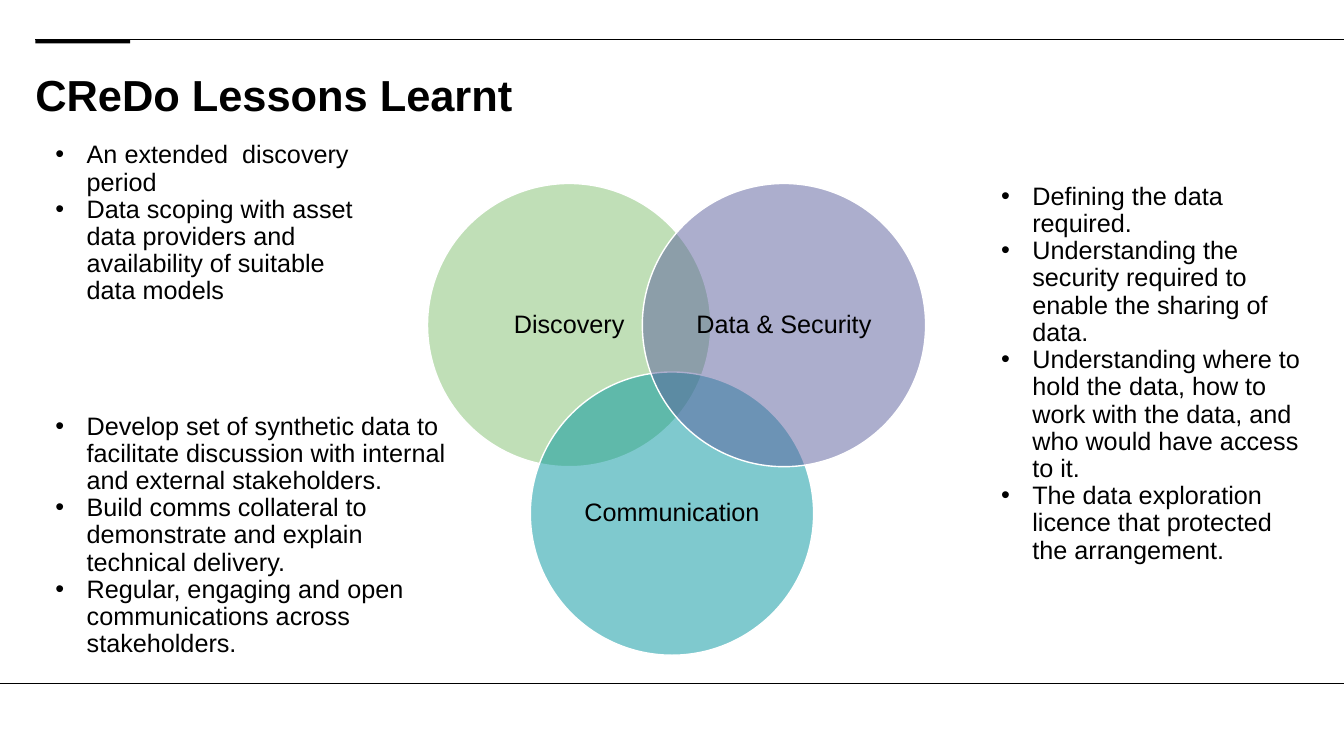
from lxml import etree
from pptx import Presentation
from pptx.dml.color import RGBColor
from pptx.enum.shapes import MSO_CONNECTOR, MSO_SHAPE
from pptx.enum.text import MSO_ANCHOR, PP_ALIGN
from pptx.oxml.ns import qn
from pptx.util import Inches, Pt

STRAIGHT = MSO_CONNECTOR.STRAIGHT
OVAL, RECTANGLE = MSO_SHAPE.OVAL, MSO_SHAPE.RECTANGLE
MIDDLE, CENTER = MSO_ANCHOR.MIDDLE, PP_ALIGN.CENTER

BLACK = RGBColor(0x00, 0x00, 0x00)
WHITE = RGBColor(0xFF, 0xFF, 0xFF)
GREEN = RGBColor(0x83, 0xC0, 0x70)
TEAL = RGBColor(0x00, 0x95, 0x9E)
PURPLE = RGBColor(0x5A, 0x5E, 0x9D)

FONT = "Arial"
BODY_SIZE = 18
TITLE_SIZE = 31
SLIDE_WIDTH, SLIDE_HEIGHT = Inches(13.33), Inches(7.5)

# Percentages of the slide's width or height
MARGIN = 2.63
LEFT_COLUMN = 4.13
RIGHT_COLUMN = 74.49
TOP_RULE, BOTTOM_RULE = 5.2, 90.4
VENN_TOP = 24.27
CIRCLE_WIDTH = 21.08

# Label, colour, left, top, from back to front
THEMES = [
    ("Discovery", GREEN, 31.81, VENN_TOP),
    ("Communication", TEAL, 39.46, 49.2),
    ("Data & Security", PURPLE, 47.79, VENN_TOP),
]

# Left, top, width, height, points
LESSONS = [
    (LEFT_COLUMN, 18.8, 22.73, 21.07, [
        "An extended  discovery period",
        "Data scoping with asset data providers and availability of suitable data models",
    ]),
    (RIGHT_COLUMN, VENN_TOP, 22.73, 52.67, [
        "Defining the data required.",
        "Understanding the security required to enable the sharing of data.",
        "Understanding where to hold the data, how to work with the data, "
        "and who would have access to it.",
        "The data exploration licence that protected the arrangement.",
    ]),
    (LEFT_COLUMN, 54.67, 29.41, 32.8, [
        "Develop set of synthetic data to facilitate discussion with internal "
        "and external stakeholders.",
        "Build comms collateral to demonstrate and explain technical delivery.",
        "Regular, engaging and open communications across stakeholders.",
    ]),
]


def across(percent):
    return round(SLIDE_WIDTH * percent / 100)


def down(percent):
    return round(SLIDE_HEIGHT * percent / 100)


def set_margins(frame, margin):
    frame.margin_left = frame.margin_right = margin
    frame.margin_top = frame.margin_bottom = margin


def style(paragraph, size, bold=False):
    paragraph.line_spacing = 0.9
    font = paragraph.font
    font.name, font.size, font.bold = FONT, Pt(size), bold
    font.color.rgb = BLACK


def add_bullet(paragraph):
    properties = paragraph._p.get_or_add_pPr()
    indent = Inches(0.31)
    properties.set("marL", str(indent))
    properties.set("indent", str(-indent))
    etree.SubElement(properties, qn("a:buFont"), typeface=FONT)
    etree.SubElement(properties, qn("a:buChar"), char="•")


def add_text(slide, left, top, width, height, lines, size=BODY_SIZE, bold=False, bulleted=False):
    box = slide.shapes.add_textbox(across(left), down(top), across(width), down(height))
    frame = box.text_frame
    frame.word_wrap = True
    set_margins(frame, 0)
    frame.text = "\n".join(lines)
    for paragraph in frame.paragraphs:
        if bulleted:
            add_bullet(paragraph)
        style(paragraph, size, bold)


def add_rule(slide, left, top):
    """Draw a hairline from left to the right edge of the slide."""
    rule = slide.shapes.add_connector(STRAIGHT, across(left), down(top), SLIDE_WIDTH, down(top))
    rule.line.color.rgb = BLACK
    rule.line.width = Pt(0.12)
    etree.SubElement(rule._element.spPr, qn("a:effectLst"))


def add_accent(slide):
    accent = slide.shapes.add_shape(
        RECTANGLE, across(MARGIN), down(TOP_RULE), across(7.05), down(0.53))
    accent.shadow.inherit = False
    accent.fill.solid()
    accent.fill.fore_color.rgb = BLACK
    accent.line.fill.background()


def add_theme_circle(slide, label, color, left, top):
    diameter = across(CIRCLE_WIDTH)
    circle = slide.shapes.add_shape(OVAL, across(left), down(top), diameter, diameter)
    circle.shadow.inherit = False
    circle.fill.solid()
    circle.fill.fore_color.rgb = color
    tint = circle._element.spPr.find(qn("a:solidFill")).find(qn("a:srgbClr"))
    etree.SubElement(tint, qn("a:alpha"), val="50000")
    circle.line.color.rgb = WHITE
    circle.line.width = Pt(1)
    frame = circle.text_frame
    frame.word_wrap = True
    frame.vertical_anchor = MIDDLE
    set_margins(frame, Inches(0.07))
    frame.text = label
    caption = frame.paragraphs[0]
    caption.alignment = CENTER
    style(caption, BODY_SIZE)


def main():
    deck = Presentation()
    deck.slide_width, deck.slide_height = SLIDE_WIDTH, SLIDE_HEIGHT
    slide = deck.slides.add_slide(deck.slide_layouts[6])

    add_rule(slide, MARGIN, TOP_RULE)
    add_accent(slide)
    add_rule(slide, 0, BOTTOM_RULE)
    add_text(slide, MARGIN, 9.73, 94.67, 14.53, ["CReDo Lessons Learnt"], TITLE_SIZE, bold=True)
    for left, top, width, height, points in LESSONS:
        add_text(slide, left, top, width, height, points, bulleted=True)
    for theme in THEMES:
        add_theme_circle(slide, *theme)

    deck.save("out.pptx")


if __name__ == "__main__":
    main()
